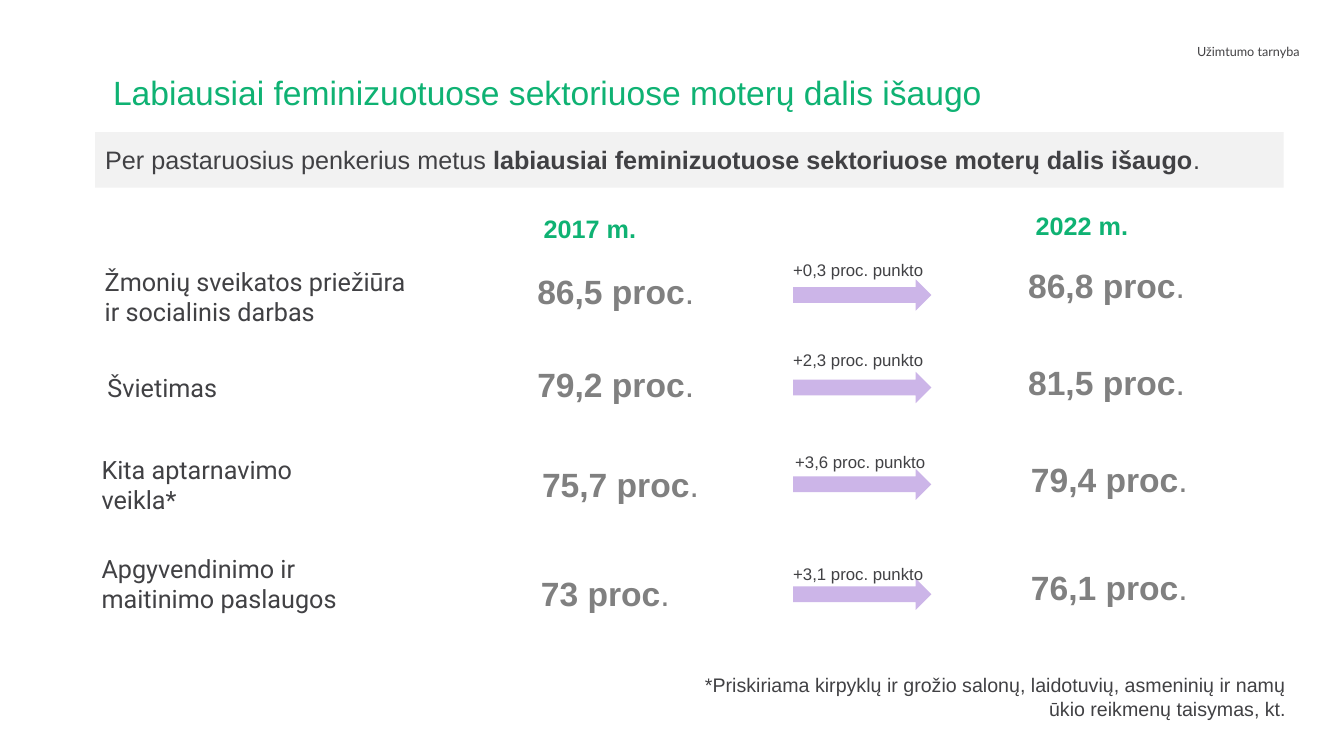
from dataclasses import dataclass

from pptx import Presentation
from pptx.dml.color import RGBColor
from pptx.enum.shapes import MSO_SHAPE
from pptx.enum.text import MSO_ANCHOR, PP_ALIGN
from pptx.util import Cm, Pt


@dataclass(frozen=True)
class Theme:
    green: str = "0FB273"
    text: str = "414144"
    header: str = "434244"
    value: str = "808080"
    banner: str = "F2F2F2"
    arrow: str = "CCB5E8"
    font: str = "Arial"
    label_font: str = "Roboto"
    header_font: str = "Lato"
    header_size: int = 9
    change_size: int = 12
    note_size: int = 14
    body_size: int = 18
    large_size: int = 24


THEME = Theme()


@dataclass(frozen=True)
class Sector:
    """Row top, name and values; each nudge is an (x, y) offset in cm."""
    top: float
    name: str
    change: str
    before: str
    after: str
    name_nudge: tuple
    change_nudge: float
    before_nudge: tuple
    after_nudge: tuple
    arrow_drop: float
    name_width: float = 7.62


SECTORS = [
    Sector(6.43, "Žmonių sveikatos priežiūra ir socialinis darbas", "+0,3", "86,5", "86,8",
           (0.08, 0.15), 0, (0, 0.28), (0, 0.12), 0.61, 8.31),
    Sector(8.69, "Švietimas", "+2,3", "79,2", "81,5",
           (0.15, 0.56), 0, (0, 0.35), (0, 0.3), 0.68),
    Sector(11.25, "Kita aptarnavimo veikla*", "+3,6", "75,7", "79,4",
           (0, 0.08), 0.05, (0.12, 0.31), (0.07, 0.18), 0.56, 7.16),
    Sector(14.07, "Apgyvendinimo ir maitinimo paslaugos", "+3,1", "73", "76,1",
           (0, -0.25), 0, (-0.26, 0.23), (0.07, 0.1), 0.51),
]


def style(paragraph, size, color, font=THEME.font, bold=None):
    paragraph.font.size = Pt(size)
    paragraph.font.name = font
    paragraph.font.color.rgb = RGBColor.from_string(color)
    paragraph.font.bold = bold


def add_runs(paragraph, runs):
    """Add (text, bold) pairs as runs."""
    for text, bold in runs:
        run = paragraph.add_run()
        run.text = text
        run.font.bold = bold


def add_text(slide, box, runs, size, color, font=THEME.font, align=PP_ALIGN.LEFT):
    shape = slide.shapes.add_textbox(*map(Cm, box))
    shape.text_frame.word_wrap = True
    paragraph = shape.text_frame.paragraphs[0]
    paragraph.alignment = align
    add_runs(paragraph, runs)
    style(paragraph, size, color, font)
    return shape


def add_filled(slide, kind, box, color):
    shape = slide.shapes.add_shape(kind, *map(Cm, box))
    shape.shadow.inherit = False
    shape.fill.solid()
    shape.fill.fore_color.rgb = RGBColor.from_string(color)
    shape.line.fill.background()
    return shape


def add_header(slide, left, top, width):
    add_text(slide, (left + width - 11.43, top, 11.43, 1.19), [("Užimtumo tarnyba", False)],
             THEME.header_size, THEME.header, THEME.header_font, PP_ALIGN.RIGHT)
    title = add_text(slide, (left, top + 0.69, 28.63, 1.42),
                     [("Labiausiai feminizuotuose sektoriuose moterų dalis išaugo", False)],
                     THEME.large_size, THEME.green)
    title.text_frame.vertical_anchor = MSO_ANCHOR.MIDDLE
    title.text_frame.paragraphs[0].line_spacing = 0.9


def add_banner(slide, box):
    banner = add_filled(slide, MSO_SHAPE.RECTANGLE, box, THEME.banner)
    banner.text_frame.word_wrap = True
    banner.text_frame.vertical_anchor = MSO_ANCHOR.MIDDLE
    paragraph = banner.text_frame.paragraphs[0]
    paragraph.alignment = PP_ALIGN.LEFT
    add_runs(paragraph, [
        ("Per pastaruosius penkerius metus ", False),
        ("labiausiai feminizuotuose sektoriuose moterų dalis išaugo", True),
        (".", False),
    ])
    style(paragraph, THEME.body_size, THEME.text)


def add_year(slide, left, top, year):
    add_text(slide, (left, top, 3.1, 1.02), [(f"{year} m.", True)],
             THEME.body_size, THEME.green, align=PP_ALIGN.RIGHT)


def add_sector(slide, left, sector):
    """Place one row: name, first share, change over its arrow, second share."""
    x, y = sector.name_nudge
    add_text(slide, (left + x, sector.top + y, sector.name_width, 1.8), [(sector.name, False)],
             THEME.body_size, THEME.text, THEME.label_font)
    shares = [(9.86, sector.before, sector.before_nudge), (22.23, sector.after, sector.after_nudge)]
    for column, share, (x, y) in shares:
        add_text(slide, (left + column + x, sector.top + y, 6.93, 1.27),
                 [(f"{share} proc", True), (". ", False)],
                 THEME.large_size, THEME.value, align=PP_ALIGN.CENTER)
    add_filled(slide, MSO_SHAPE.RIGHT_ARROW,
               (left + 17.68, sector.top + sector.arrow_drop, 3.48, 0.79), THEME.arrow)
    add_text(slide, (left + 17.43 + sector.change_nudge, sector.top, 3.99, 0.76),
             [(f"{sector.change} proc. punkto", False)], THEME.change_size, THEME.text)


def add_footnote(slide, box):
    note = ("*Priskiriama kirpyklų ir grožio salonų, laidotuvių, asmeninių ir namų "
            "ūkio reikmenų taisymas, kt.")
    add_text(slide, box, [(note, False)], THEME.note_size, THEME.text, align=PP_ALIGN.RIGHT)


def main():
    presentation = Presentation()
    presentation.slide_width, presentation.slide_height = Cm(33.87), Cm(19.05)
    slide = presentation.slides.add_slide(presentation.slide_layouts[6])
    add_header(slide, 2.6, 0.99, 30.4)
    add_banner(slide, (2.4, 3.33, 29.95, 1.4))
    add_year(slide, 13.18, 5.26, 2017)
    add_year(slide, 25.58, 5.18, 2022)
    for sector in SECTORS:
        add_sector(slide, 2.31, sector)
    add_footnote(slide, (16.89, 16.84, 15.77, 1.45))
    presentation.save("out.pptx")


if __name__ == "__main__":
    main()
